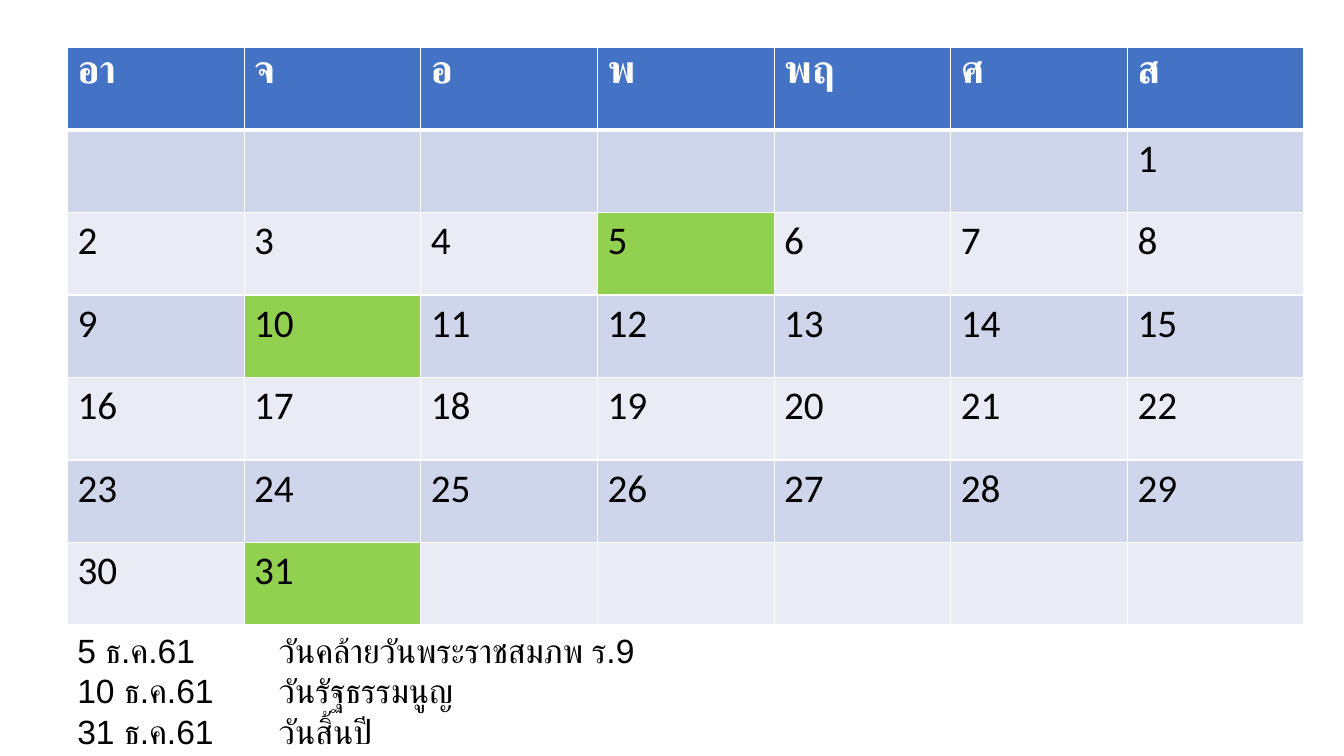
from lxml.etree import SubElement
from pptx import Presentation
from pptx.dml.color import RGBColor
from pptx.enum.text import MSO_AUTO_SIZE
from pptx.oxml.ns import qn
from pptx.util import Cm, Pt

COLORS = {
    "header": "4472C4",
    "odd": "CFD5EA",
    "even": "E9EBF5",
    "holiday": "92D050",
    "white": "FFFFFF",
    "black": "000000",
}
WEEKDAYS = ["อา", "จ", "อ", "พ", "พฤ", "ศ", "ส"]
HOLIDAYS = {
    5: "วันคล้ายวันพระราชสมภพ ร.9",
    10: "วันรัฐธรรมนูญ",
    31: "วันสิ้นปี",
}
LAST_DAY = 31
FIRST_COLUMN = 6  # the month starts on a Saturday
WEEKS = 6


class CalendarSlide:
    header_format = {"name": "Calibri", "size": Pt(28), "bold": True}
    day_format = {"name": "Calibri", "size": Pt(28), "bold": False}
    note_format = {"name": "Arial", "size": Pt(24)}

    def __init__(self, prs):
        self.s = prs.slides.add_slide(prs.slide_layouts[6])

    def add_text(self, p, text, color, formats):
        r = p.add_run()
        r.text = text
        for name, value in formats.items():
            setattr(r.font, name, value)
        r.font.color.rgb = RGBColor.from_string(COLORS[color])

    def borders(self, cell, **widths):
        """Draw white cell borders; widths in points, keyed by L, R, T, B."""
        tcPr = cell._tc.get_or_add_tcPr()
        for side, width in widths.items():
            ln = SubElement(tcPr, qn(f"a:ln{side}"), w=str(Pt(width)))
            fill = SubElement(ln, qn("a:solidFill"))
            SubElement(fill, qn("a:srgbClr"), val=COLORS["white"])

    def cell(self, cell, text, fill, color, formats, top=1, bottom=1):
        self.borders(cell, L=1, R=1, T=top, B=bottom)
        cell.fill.solid()
        cell.fill.fore_color.rgb = RGBColor.from_string(COLORS[fill])
        if text:
            self.add_text(cell.text_frame.paragraphs[0], text, color, formats)

    def calendar(self, left, top, width, height):
        columns = len(WEEKDAYS)
        table = self.s.shapes.add_table(
            WEEKS + 1, columns, left, top, width, height).table
        for col, name in enumerate(WEEKDAYS):
            self.cell(table.cell(0, col), name, "header", "white",
                      self.header_format, bottom=3)
        for week in range(WEEKS):
            band = "even" if week % 2 else "odd"
            for col in range(columns):
                day = week * columns + col - FIRST_COLUMN + 1
                self.cell(table.cell(week + 1, col),
                          str(day) if 1 <= day <= LAST_DAY else "",
                          "holiday" if day in HOLIDAYS else band,
                          "black", self.day_format,
                          top=1 if week else 3)

    def notes(self, left, top, width, height, tab):
        tf = self.s.shapes.add_textbox(left, top, width, height).text_frame
        tf.word_wrap = True
        tf.auto_size = MSO_AUTO_SIZE.SHAPE_TO_FIT_TEXT
        for i, (day, event) in enumerate(HOLIDAYS.items()):
            p = tf.add_paragraph() if i else tf.paragraphs[0]
            tabs = SubElement(p._p.get_or_add_pPr(), qn("a:tabLst"))
            SubElement(tabs, qn("a:tab"), pos=str(tab), algn="l")
            self.add_text(p, f"{day} ธ.ค.61\t{event}", "black",
                          self.note_format)


def main():
    prs = Presentation()
    prs.slide_width, prs.slide_height = Cm(33.87), Cm(19.05)
    slide = CalendarSlide(prs)
    slide.calendar(Cm(1.7), Cm(1.2), Cm(31.17), Cm(14.55))
    slide.notes(Cm(1.7), Cm(15.75), Cm(24.46), Cm(3.33), tab=Cm(5.08))
    prs.save("out.pptx")


if __name__ == "__main__":
    main()
